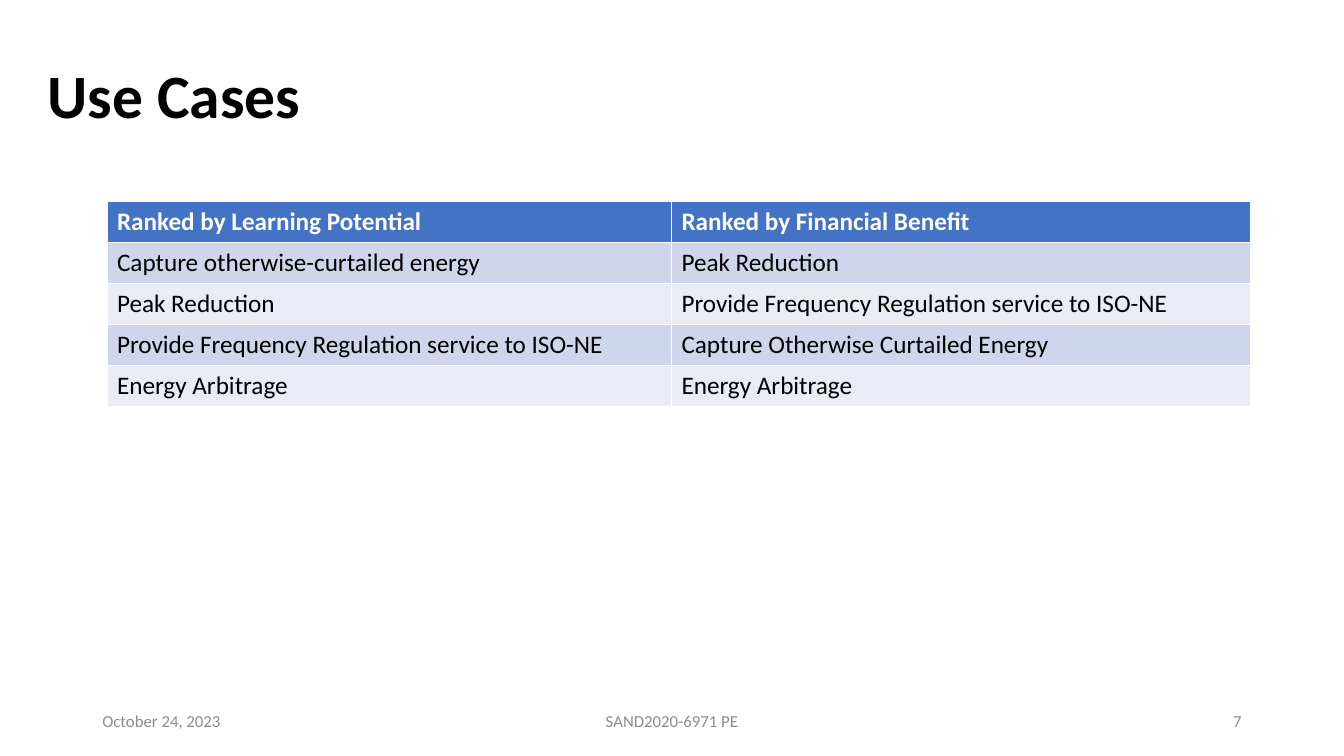
"""Builds the Use Cases slide with a table of two rankings."""
from pptx import Presentation
from pptx.dml.color import RGBColor
from pptx.enum.text import MSO_ANCHOR, PP_ALIGN
from pptx.util import Pt

LEFT, CENTER, RIGHT = PP_ALIGN.LEFT, PP_ALIGN.CENTER, PP_ALIGN.RIGHT
MIDDLE = MSO_ANCHOR.MIDDLE
TITLE_ONLY = 5


def color(value):
    return RGBColor.from_string(value)


class SlideBuilder:
    font = "Calibri"
    black, white, gray = "000000", "FFFFFF", "8C8C8C"
    header, bands = "4472C4", ("CFD5EA", "E9EBF5")

    def __init__(self, prs):
        self.s = prs.slides.add_slide(prs.slide_layouts[TITLE_ONLY])

    def set_text(self, tf, text, size, rgb, bold=False, align=LEFT):
        tf.text = text
        tf.word_wrap = True
        p = tf.paragraphs[0]
        p.alignment = align
        r = p.runs[0]
        r.font.name, r.font.size, r.font.bold = self.font, Pt(size), bold
        r.font.color.rgb = color(rgb)
        return p

    def title(self, text, x, y, w, h):
        sp = self.s.shapes.title
        sp.left, sp.top, sp.width, sp.height = Pt(x), Pt(y), Pt(w), Pt(h)
        p = self.set_text(sp.text_frame, text, 44, self.black, bold=True)
        p.line_spacing = 0.9
        sp.text_frame.vertical_anchor = MIDDLE

    def footer(self, text, x, w, align):
        sp = self.s.shapes.add_textbox(Pt(x), Pt(500.5), Pt(w), Pt(28.75))
        sp.text_frame.vertical_anchor = MIDDLE
        self.set_text(sp.text_frame, text, 12, self.gray, align=align)

    def table(self, rows, x, y, widths, row_height):
        tbl = self.s.shapes.add_table(
            len(rows), len(widths), Pt(x), Pt(y),
            Pt(sum(widths)), Pt(row_height * len(rows))).table
        for column, width in zip(tbl.columns, widths):
            column.width = Pt(width)
        for i, row in enumerate(rows):
            tbl.rows[i].height = Pt(row_height)
            is_header = i == 0
            fill = self.header if is_header else self.bands[(i - 1) % 2]
            rgb = self.white if is_header else self.black
            for j, text in enumerate(row):
                cell = tbl.cell(i, j)
                cell.fill.solid()
                cell.fill.fore_color.rgb = color(fill)
                self.set_text(cell.text_frame, text, 18, rgb, bold=is_header)


def main():
    prs = Presentation()
    prs.slide_width, prs.slide_height = Pt(960), Pt(540)
    slide = SlideBuilder(prs)
    slide.title("Use Cases", 26.9, 28.75, 867.6, 82.8)
    slide.table([
        ("Ranked by Learning Potential", "Ranked by Financial Benefit"),
        ("Capture otherwise-curtailed energy", "Peak Reduction"),
        ("Peak Reduction", "Provide Frequency Regulation service to ISO-NE"),
        ("Provide Frequency Regulation service to ISO-NE",
         "Capture Otherwise Curtailed Energy"),
        ("Energy Arbitrage", "Energy Arbitrage"),
    ], 76.4, 144.2, (403.2, 414), 29.2)
    slide.footer("SAND2020-6971 PE", 318, 324, CENTER)
    slide.footer("7", 678, 216, RIGHT)
    slide.footer("October 24, 2023", 66, 216, LEFT)
    prs.save("out.pptx")


if __name__ == "__main__":
    main()
